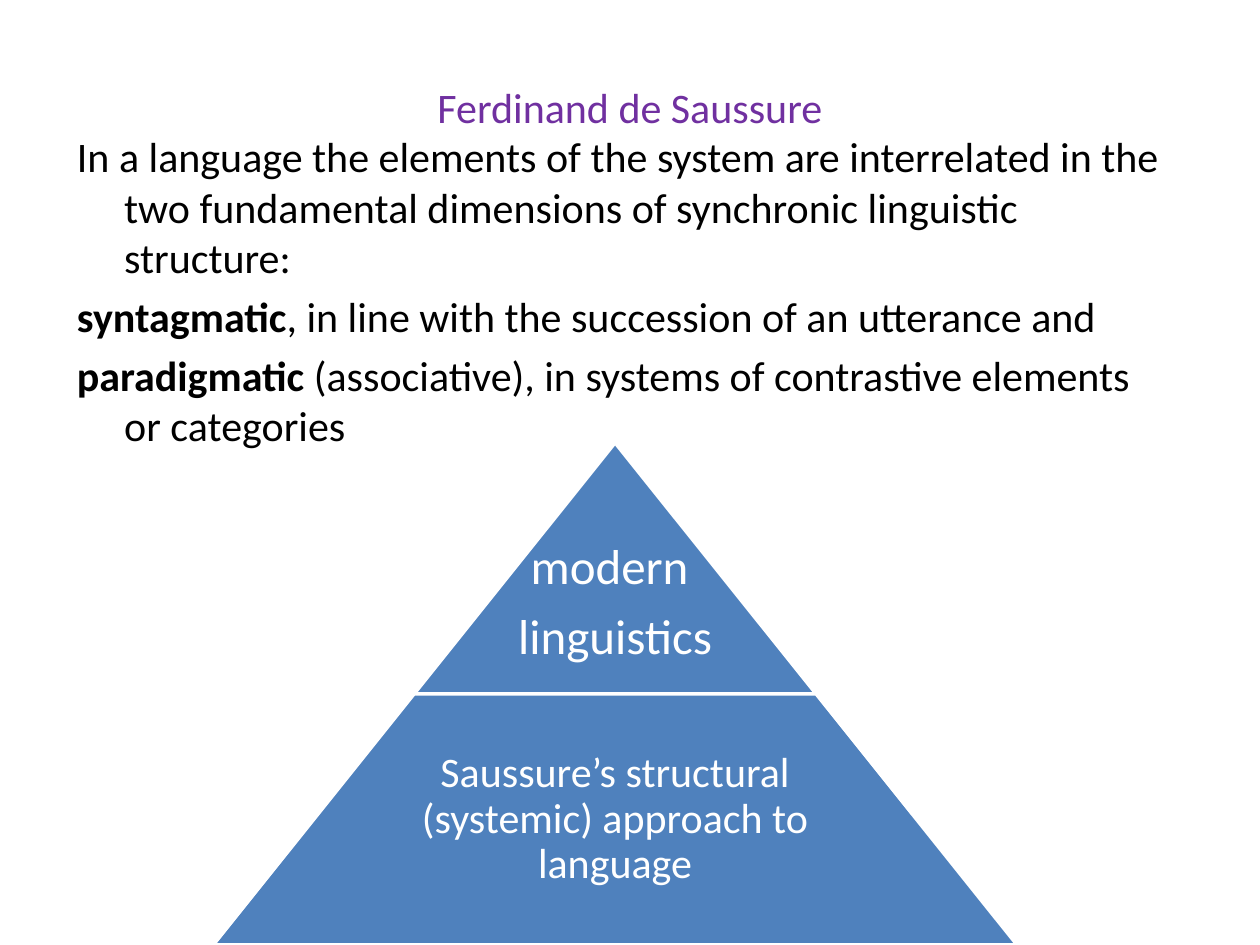
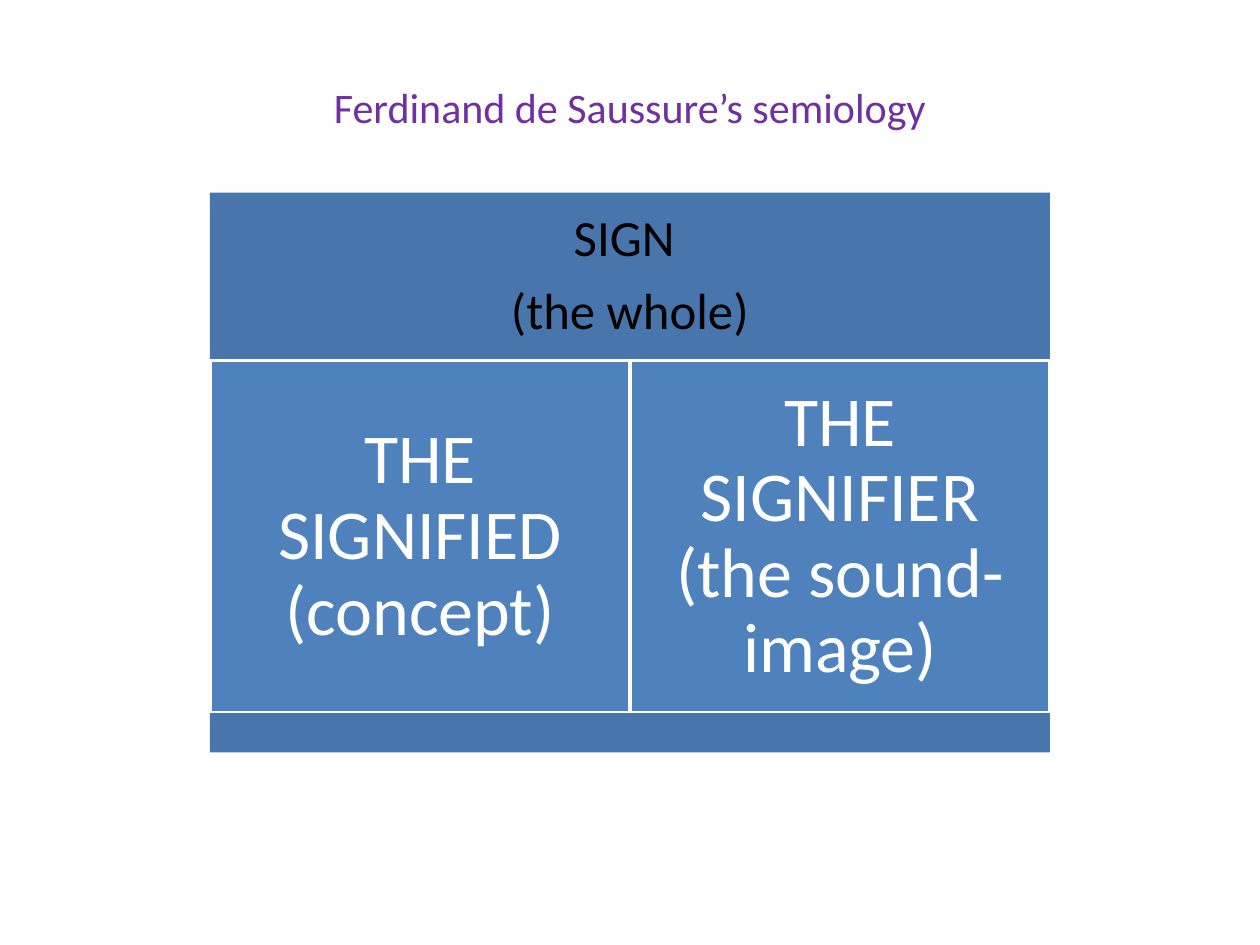
from pptx import Presentation
from pptx.dml.color import RGBColor
from pptx.enum.shapes import MSO_SHAPE
from pptx.enum.text import MSO_ANCHOR, PP_ALIGN
from pptx.util import Pt

COLOURS = {
    "title": "7030A0",
    "text": "000000",
    "light": "FFFFFF",
    "block": "4F81BD",
    "band": "4875AC",
}
FONT = "Calibri"
TITLE_BOX = (36, 21.6, 648, 78.5)


def colour(name):
    return RGBColor.from_string(COLOURS[name])


def write_text(shape, paragraphs, size=24, color="text", align=PP_ALIGN.CENTER,
               anchor=MSO_ANCHOR.MIDDLE, insets=(7.2, 3.6, 7.2, 3.6),
               line_spacing=1.0, before=0, after=0, hanging=0):
    """Fill a shape; each paragraph is a list of (text, bold) runs."""
    frame = shape.text_frame
    frame.word_wrap = True
    frame.vertical_anchor = anchor
    (frame.margin_left, frame.margin_top,
     frame.margin_right, frame.margin_bottom) = map(Pt, insets)
    for index, runs in enumerate(paragraphs):
        paragraph = frame.add_paragraph() if index else frame.paragraphs[0]
        paragraph.alignment = align
        paragraph.line_spacing = line_spacing
        paragraph.space_before = Pt(before)
        paragraph.space_after = Pt(after)
        if hanging:
            properties = paragraph._p.get_or_add_pPr()
            properties.set("marL", str(Pt(hanging)))
            properties.set("indent", str(-Pt(hanging)))
        for text, bold in runs:
            run = paragraph.add_run()
            run.text = text
            run.font.name = FONT
            run.font.size = Pt(size)
            run.font.bold = bold
            run.font.color.rgb = colour(color)


def add_text(slide, box, paragraphs, **text_format):
    shape = slide.shapes.add_textbox(*map(Pt, box))
    write_text(shape, paragraphs, **text_format)


def write_label(shape, lines, size, color="light", insets=(2.4,) * 4):
    write_text(shape, [[(line, False)] for line in lines], size=size, color=color,
               insets=insets, line_spacing=0.9, after=round(size * 0.34, 1))


def add_block(slide, kind, box, fill="block", outlined=True):
    shape = slide.shapes.add_shape(kind, *map(Pt, box))
    shape.shadow.inherit = False
    shape.fill.solid()
    shape.fill.fore_color.rgb = colour(fill)
    if outlined:
        shape.line.color.rgb = colour("light")
        shape.line.width = Pt(2)
    else:
        shape.line.fill.background()
    return shape


def add_titled_slide(presentation, title):
    slide = presentation.slides.add_slide(presentation.slide_layouts[6])
    add_text(slide, TITLE_BOX, [[(title, False)]], color="title")
    return slide


def add_pyramid(slide, box):
    """Stack two equal tiers, the lower one twice as wide as the upper."""
    left, top, width, height = box
    tier = height / 2
    tip_box = (left + width / 4, top, width / 2, tier)
    base_box = (left, top + tier, width, tier)
    for tier_box in (tip_box, base_box):
        shape = add_block(slide, MSO_SHAPE.TRAPEZOID, tier_box)
        shape.adjustments[0] = width / 4 / tier

    tip_label = slide.shapes.add_textbox(*map(Pt, tip_box))
    write_label(tip_label, ["modern ", "linguistics"], 28, insets=(2.9, 43, 2.9, 2.9))
    base_label = slide.shapes.add_textbox(
        Pt(left + width * 0.175), Pt(top + tier), Pt(width * 0.65), Pt(tier))
    write_label(base_label, ["Saussure’s structural (systemic) approach to language"], 24)


def add_sign_diagram(slide, box, header_height, footer_height):
    """Put equal columns between a header band and a footer band."""
    left, top, width, height = box
    columns = ["THE SIGNIFIED (concept)", "THE SIGNIFIER (the sound-image)"]
    column_width = width / len(columns)
    column_height = height - header_height - footer_height

    header = add_block(slide, MSO_SHAPE.RECTANGLE, (left, top, width, header_height),
                       fill="band", outlined=False)
    write_label(header, ["SIGN ", "(the whole)"], 29, color="text", insets=(8.7,) * 4)
    for index, text in enumerate(columns):
        column = add_block(slide, MSO_SHAPE.RECTANGLE,
                           (left + index * column_width, top + header_height,
                            column_width, column_height))
        write_label(column, [text], 40, insets=(12,) * 4)
    add_block(slide, MSO_SHAPE.RECTANGLE,
              (left, top + height - footer_height, width, footer_height),
              fill="band", outlined=False)


def build_dimensions_slide(presentation):
    slide = add_titled_slide(presentation, "Ferdinand de Saussure")
    add_text(slide, (36.9, 71.3, 635.8, 414), [
        [("In a language the elements of the system are interrelated in the two "
          "fundamental dimensions of synchronic linguistic structure:", False)],
        [("syntagmatic", True),
         (", in line with the succession of an utterance and", False)],
        [("paradigmatic", True),
         (" (associative), in systems of contrastive elements or categories", False)],
    ], align=PP_ALIGN.LEFT, anchor=MSO_ANCHOR.TOP, before=4.8, hanging=27)
    add_pyramid(slide, (121.8, 253, 459.4, 287))


def build_semiology_slide(presentation):
    slide = add_titled_slide(presentation, "Ferdinand de Saussure’s semiology")
    add_sign_diagram(slide, (120, 110, 480, 320), header_height=96, footer_height=22.4)


def main():
    presentation = Presentation()
    presentation.slide_width = Pt(720)
    presentation.slide_height = Pt(540)
    build_dimensions_slide(presentation)
    build_semiology_slide(presentation)
    presentation.save("out.pptx")


if __name__ == "__main__":
    main()
